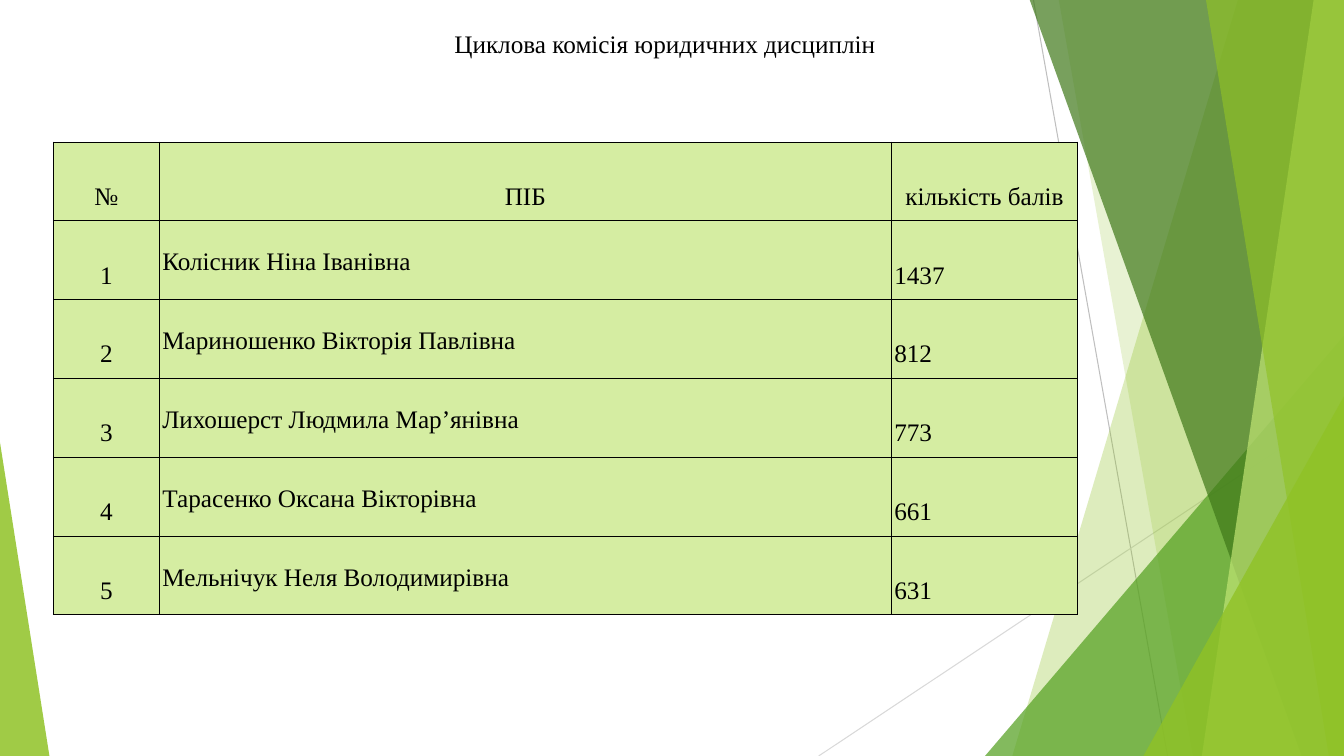
from lxml import etree
from pptx import Presentation
from pptx import util as u
from pptx.dml.color import RGBColor
from pptx.enum import shapes, text
from pptx.oxml.ns import qn

WIDTH, HEIGHT = 13.33, 7.5
FONT = "Times New Roman"
HEADERS = ["№", "ПІБ", "кількість балів"]
TEACHERS = [
    ("Колісник Ніна Іванівна", 1437),
    ("Мариношенко Вікторія Павлівна", 812),
    ("Лихошерст Людмила Мар’янівна", 773),
    ("Тарасенко Оксана Вікторівна", 661),
    ("Мельнічук Неля Володимирівна", 631),
]


def color(value):
    return RGBColor.from_string(value)


def paint(shape, fill, opacity):
    shape.shadow.inherit = False
    shape.fill.solid()
    shape.fill.fore_color.rgb = color(fill)
    shape.line.fill.background()
    tone = shape.fill._xPr.find(qn("a:solidFill"))[0]
    etree.SubElement(tone, qn("a:alpha"), val=str(opacity * 1000))


def add_line(page, start, end, stroke):
    points = [u.Inches(value) for value in (*start, *end)]
    line = page.shapes.add_connector(shapes.MSO_CONNECTOR.STRAIGHT, *points)
    line.line.color.rgb = color(stroke)
    line.line.width = u.Pt(0.75)
    etree.SubElement(line._element.spPr, qn("a:effectLst"))


def add_band(page, top_x, bottom_x, fill, opacity):
    corners = [(top_x, -0.01), (WIDTH, -0.01), (WIDTH, HEIGHT), (bottom_x, HEIGHT)]
    points = [(u.Inches(x), u.Inches(y)) for x, y in corners]
    builder = page.shapes.build_freeform(*points[0])
    builder.add_line_segments(points[1:], close=True)
    paint(builder.convert_to_shape(), fill, opacity)


def add_triangle(page, left, top, width, apex, fill, opacity):
    frame = [u.Inches(value) for value in (left, top, width, HEIGHT - top)]
    triangle = page.shapes.add_shape(shapes.MSO_SHAPE.ISOSCELES_TRIANGLE, *frame)
    triangle.adjustments[0] = apex
    paint(triangle, fill, opacity)


def add_decoration(page):
    add_line(page, (10.25, 0), (11.58, HEIGHT), "BFBFBF")
    add_line(page, (WIDTH, 4.03), (8.12, HEIGHT), "D9D9D9")
    add_band(page, 12.28, 10.04, "90C226", 30)
    add_band(page, 10.5, 11.83, "90C226", 20)
    add_triangle(page, 9.77, 3.33, 3.56, 1, "54A021", 72)
    add_band(page, 10.21, 12.91, "3F7819", 70)
    add_band(page, 13.03, 11.92, "C0E474", 70)
    add_band(page, 11.96, 13.18, "90C226", 65)
    add_triangle(page, 11.34, 3.93, 1.99, 1, "90C226", 80)
    add_triangle(page, 0, 4.39, 0.49, 0, "90C226", 85)


def format_para(para, alignment):
    para.alignment = alignment
    para.font.name = FONT
    para.font.size = u.Pt(18)
    para.font.color.rgb = color("000000")


def set_title(page, wording):
    title = page.shapes.title
    title.left, title.top = u.Inches(2.09), u.Inches(0.23)
    title.width, title.height = u.Inches(9.01), u.Inches(0.4)
    frame = title.text_frame
    frame.text = wording
    frame.word_wrap = True
    frame.auto_size = text.MSO_AUTO_SIZE.SHAPE_TO_FIT_TEXT
    frame.vertical_anchor = text.MSO_ANCHOR.TOP
    format_para(frame.paragraphs[0], text.PP_ALIGN.CENTER)


def add_borders(cell):
    properties = cell._tc.get_or_add_tcPr()
    for side in ("lnL", "lnR", "lnT", "lnB"):
        border = etree.SubElement(properties, qn(f"a:{side}"), w=str(u.Pt(0.68)))
        fill = etree.SubElement(border, qn("a:solidFill"))
        etree.SubElement(fill, qn("a:srgbClr"), val="000000")


def fill_cell(cell, wording, alignment, anchor):
    add_borders(cell)
    cell.fill.solid()
    cell.fill.fore_color.rgb = color("D5EDA2")
    cell.margin_left = cell.margin_right = u.Inches(0.03)
    cell.margin_top = cell.margin_bottom = u.Inches(0.1)
    cell.vertical_anchor = anchor
    cell.text = wording
    para = cell.text_frame.paragraphs[0]
    para.line_spacing = 1.15
    format_para(para, alignment)


def add_scores(page):
    rows = [HEADERS]
    for number, (name, score) in enumerate(TEACHERS, 1):
        rows.append([str(number), name, str(score)])
    frame = [u.Inches(value) for value in (0.53, 1.41, 10.16, 4.69)]
    table = page.shapes.add_table(len(rows), len(HEADERS), *frame).table
    table.first_row = table.horz_banding = False
    for column, width in zip(table.columns, (1.05, 7.26, 1.85)):
        column.width = u.Inches(width)
    for r, row in enumerate(rows):
        for c, wording in enumerate(row):
            centred = r == 0 or c == 0
            alignment = text.PP_ALIGN.CENTER if centred else text.PP_ALIGN.LEFT
            is_name = r > 0 and c == 1
            anchor = text.MSO_ANCHOR.MIDDLE if is_name else text.MSO_ANCHOR.BOTTOM
            fill_cell(table.cell(r, c), wording, alignment, anchor)


def main():
    deck = Presentation()
    deck.slide_width, deck.slide_height = u.Inches(WIDTH), u.Inches(HEIGHT)
    page = deck.slides.add_slide(deck.slide_layouts[5])
    add_decoration(page)
    set_title(page, "Циклова комісія юридичних дисциплін")
    add_scores(page)
    deck.save("out.pptx")


if __name__ == "__main__":
    main()
